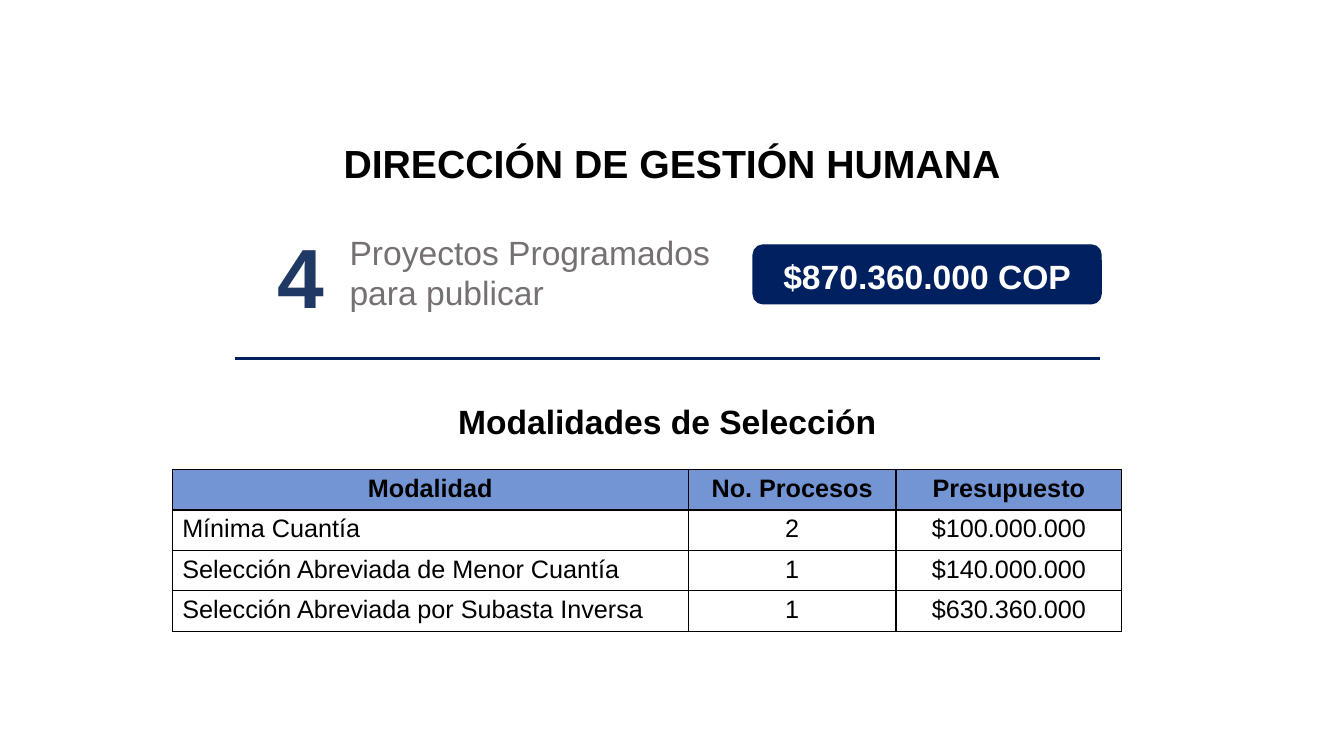
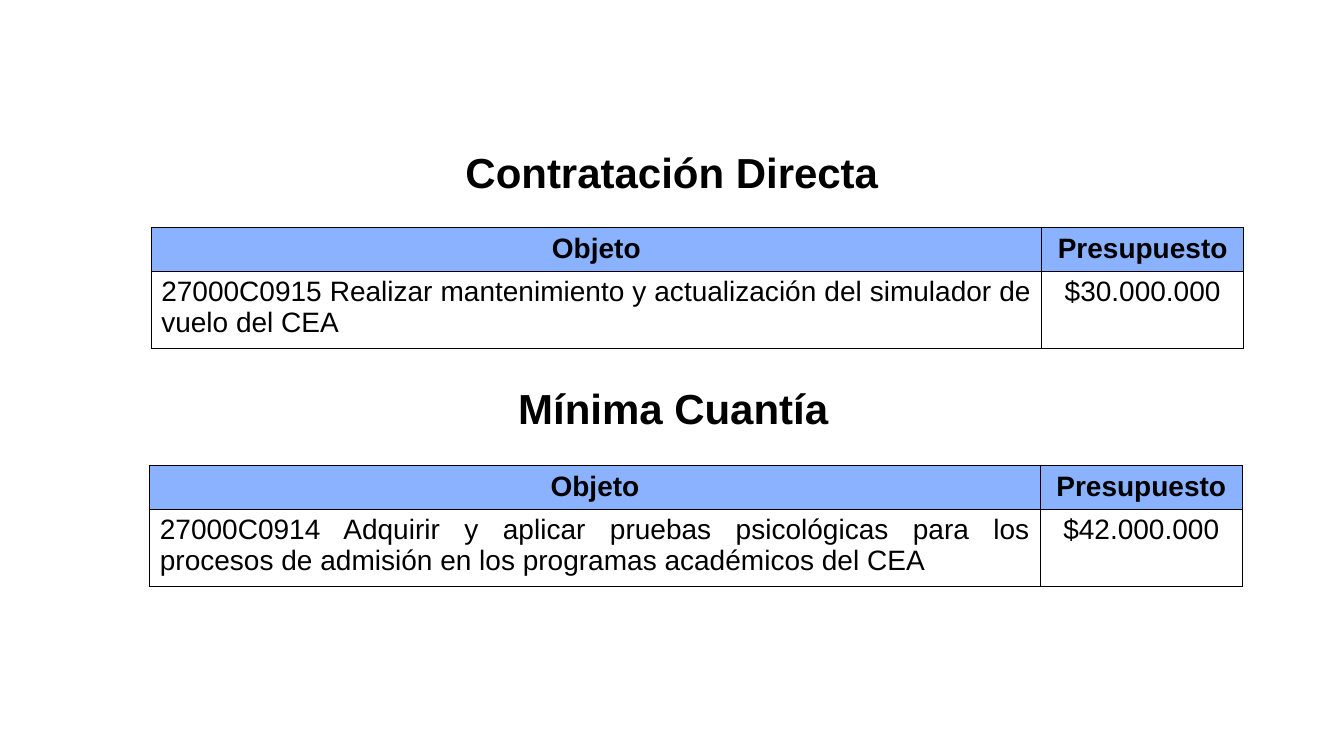
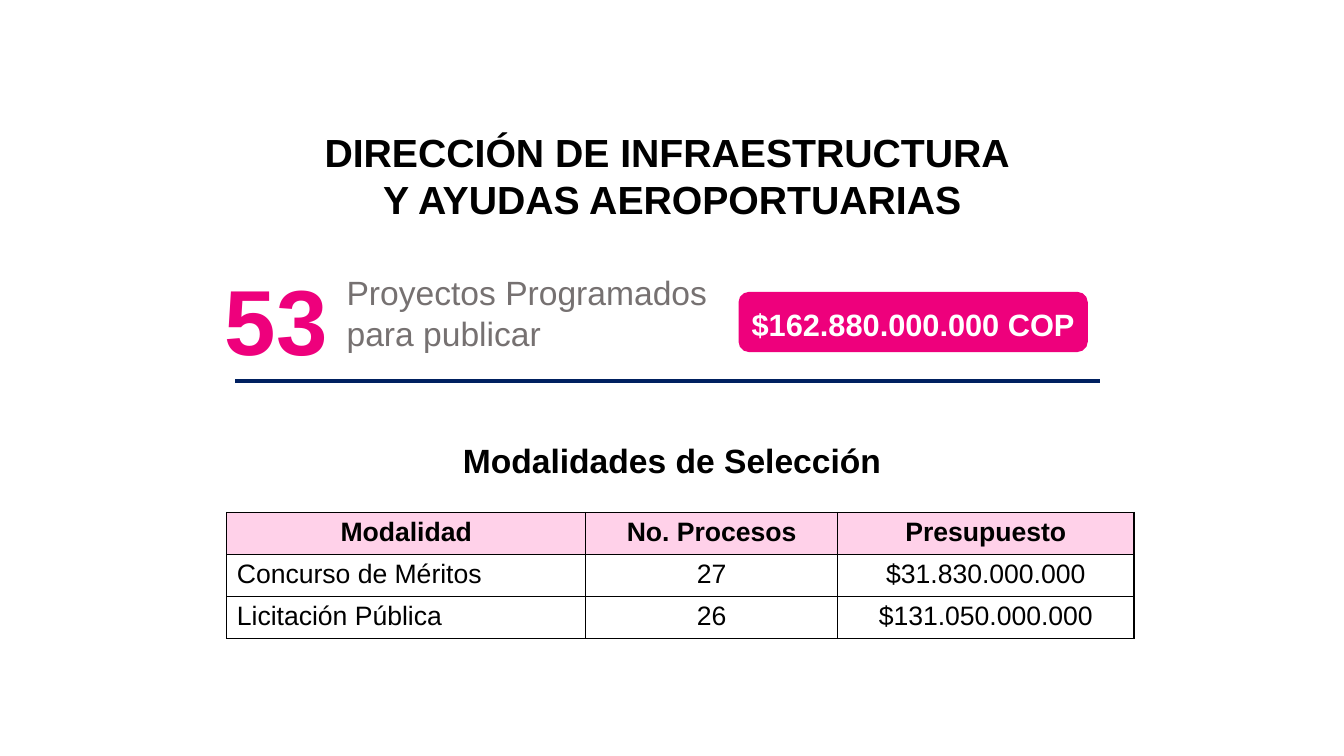
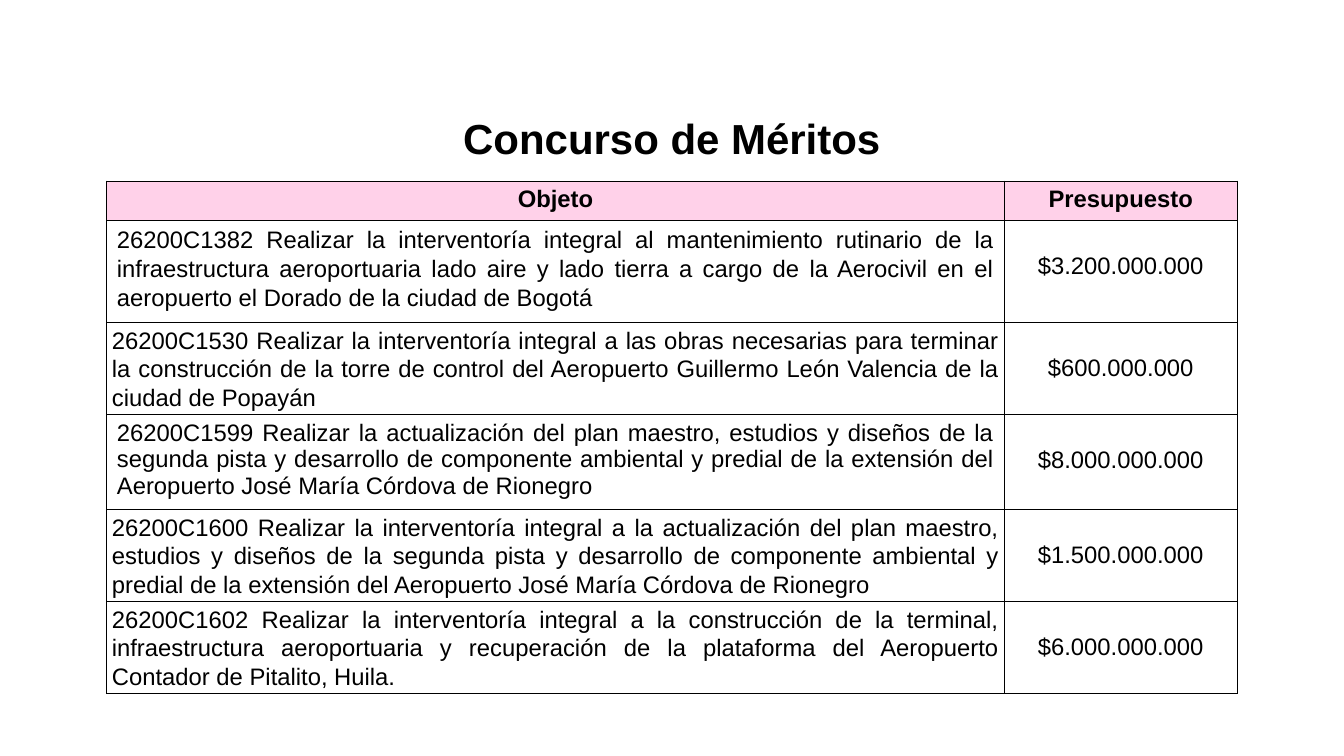
from dataclasses import dataclass
from typing import Optional

from lxml.etree import SubElement
from pptx import Presentation
from pptx.dml.color import RGBColor
from pptx.enum.shapes import MSO_CONNECTOR, MSO_SHAPE
from pptx.enum.text import MSO_ANCHOR, MSO_AUTO_SIZE, PP_ALIGN
from pptx.oxml.ns import qn
from pptx.slide import Slide
from pptx.table import _Cell
from pptx.text.text import TextFrame
from pptx.util import Pt


@dataclass(frozen=True)
class Theme:
    font: str = "Arial"
    black: str = "000000"
    white: str = "FFFFFF"
    grey: str = "767171"
    navy: str = "002060"
    count_blue: str = "203864"
    steel: str = "7395D3"
    sky: str = "8BB2FF"
    magenta: str = "EE007C"
    pink: str = "FFD1E9"
    direction_size: int = 28
    heading_size: int = 30
    label_size: int = 24
    border: float = 1
    rule: float = 2.25


THEME = Theme()


@dataclass(frozen=True)
class Box:
    left: float
    top: float
    width: float
    height: float

    def lengths(self) -> tuple:
        return Pt(self.left), Pt(self.top), Pt(self.width), Pt(self.height)


@dataclass(frozen=True)
class Row:
    height: float
    cells: tuple
    tight: bool = False
    spacing: Optional[float] = None


@dataclass(frozen=True)
class Grid:
    left: float
    top: float
    columns: tuple
    rows: tuple
    header_fill: str
    size: float
    amount_inset: float = 3.6


@dataclass(frozen=True)
class Heading:
    text: str
    box: Box


@dataclass(frozen=True)
class Summary:
    title: Heading
    count: Heading
    count_size: int
    count_color: str
    caption_box: Box
    budget: Heading
    budget_size: int
    budget_fill: str
    rule_top: float
    modalities_box: Box
    modalities: Grid


@dataclass(frozen=True)
class Detail:
    headings: tuple
    grids: tuple


def write_text(
    frame: TextFrame,
    text: str,
    *,
    size: float,
    color: str = THEME.black,
    bold: bool = False,
    align: PP_ALIGN = PP_ALIGN.LEFT,
    spacing: Optional[float] = None,
) -> None:
    for index, line in enumerate(text.split("\n")):
        paragraph = frame.add_paragraph() if index else frame.paragraphs[0]
        paragraph.alignment = align
        if spacing:
            paragraph.line_spacing = spacing
        run = paragraph.add_run()
        run.text = line
        run.font.name = THEME.font
        run.font.size = Pt(size)
        run.font.bold = bold
        run.font.color.rgb = RGBColor.from_string(color)


def add_label(slide: Slide, text: str, box: Box, **text_format) -> None:
    frame = slide.shapes.add_textbox(*box.lengths()).text_frame
    frame.word_wrap = True
    write_text(frame, text, **text_format)


def set_title(slide: Slide, heading: Heading, size: int) -> None:
    title = slide.shapes.title
    title.left, title.top, title.width, title.height = heading.box.lengths()
    frame = title.text_frame
    frame.auto_size = MSO_AUTO_SIZE.NONE
    frame.word_wrap = True
    frame.vertical_anchor = MSO_ANCHOR.TOP
    write_text(frame, heading.text, size=size, bold=True, align=PP_ALIGN.CENTER)


def add_budget(slide: Slide, budget: Heading, size: int, fill: str) -> None:
    badge = slide.shapes.add_shape(MSO_SHAPE.ROUNDED_RECTANGLE, *budget.box.lengths())
    badge.shadow.inherit = False
    badge.fill.solid()
    badge.fill.fore_color.rgb = RGBColor.from_string(fill)
    badge.line.color.rgb = RGBColor.from_string(fill)
    badge.line.width = Pt(THEME.border)
    frame = badge.text_frame
    frame.margin_left = frame.margin_right = frame.margin_bottom = Pt(0)
    frame.margin_top = Pt(3)
    frame.vertical_anchor = MSO_ANCHOR.MIDDLE
    write_text(frame, budget.text, size=size, color=THEME.white, bold=True,
               align=PP_ALIGN.CENTER)


def add_rule(slide: Slide, top: float) -> None:
    rule = slide.shapes.add_connector(
        MSO_CONNECTOR.STRAIGHT, Pt(168), Pt(top), Pt(786), Pt(top)
    )
    rule.line.color.rgb = RGBColor.from_string(THEME.navy)
    rule.line.width = Pt(THEME.rule)
    SubElement(rule._element.spPr, qn("a:effectLst"))


def add_borders(cell: _Cell) -> None:
    properties = cell._tc.get_or_add_tcPr()
    for side in ("lnL", "lnR", "lnT", "lnB"):
        border = SubElement(properties, qn(f"a:{side}"), w=str(Pt(THEME.border)))
        fill = SubElement(border, qn("a:solidFill"))
        SubElement(fill, qn("a:srgbClr"), val=THEME.black)


def add_grid(slide: Slide, grid: Grid) -> None:
    box = Box(grid.left, grid.top, sum(grid.columns), sum(r.height for r in grid.rows))
    table = slide.shapes.add_table(
        len(grid.rows), len(grid.columns), *box.lengths()
    ).table
    table.first_row = table.horz_banding = False
    for column, width in zip(table.columns, grid.columns):
        column.width = Pt(width)
    for row_index, row in enumerate(grid.rows):
        table.rows[row_index].height = Pt(row.height)
        is_header = row_index == 0
        for column_index, text in enumerate(row.cells):
            cell = table.cell(row_index, column_index)
            is_description = column_index == 0 and not is_header
            add_borders(cell)
            if is_header:
                cell.fill.solid()
                cell.fill.fore_color.rgb = RGBColor.from_string(grid.header_fill)
            else:
                cell.fill.background()
            if is_description and row.tight:
                cell.margin_left = cell.margin_right = Pt(3.6)
                cell.margin_top = cell.margin_bottom = Pt(0)
                cell.vertical_anchor = MSO_ANCHOR.MIDDLE
            elif not is_description and not is_header:
                cell.margin_top = Pt(grid.amount_inset)
            write_text(
                cell.text_frame,
                text,
                size=grid.size,
                bold=is_header,
                align=PP_ALIGN.JUSTIFY if is_description else PP_ALIGN.CENTER,
                spacing=row.spacing if is_description else None,
            )


def draw_summary(slide: Slide, summary: Summary) -> None:
    set_title(slide, summary.title, THEME.direction_size)
    add_label(slide, summary.count.text, summary.count.box,
              size=summary.count_size, color=summary.count_color, bold=True)
    add_label(slide, "Proyectos Programados para publicar", summary.caption_box,
              size=THEME.label_size, color=THEME.grey)
    add_budget(slide, summary.budget, summary.budget_size, summary.budget_fill)
    add_rule(slide, summary.rule_top)
    add_label(slide, "Modalidades de Selección", summary.modalities_box,
              size=THEME.label_size, bold=True, align=PP_ALIGN.CENTER)
    add_grid(slide, summary.modalities)


def draw_detail(slide: Slide, detail: Detail) -> None:
    first, *others = detail.headings
    set_title(slide, first, THEME.heading_size)
    for heading in others:
        add_label(slide, heading.text, heading.box, size=THEME.heading_size,
                  bold=True, align=PP_ALIGN.CENTER)
    for grid in detail.grids:
        add_grid(slide, grid)


MODALITY_HEADER = ("Modalidad", "No. Procesos", "Presupuesto")
OBJECT_HEADER = ("Objeto", "Presupuesto")


def modality_rows(height: float, *modalities: tuple) -> tuple:
    return tuple(Row(height, cells) for cells in (MODALITY_HEADER, *modalities))


def contract_grid(left: float, top: float, description: str, amount: str) -> Grid:
    return Grid(
        left, top, (636, 144.5),
        (Row(31.2, OBJECT_HEADER), Row(55.2, (description, amount))),
        THEME.sky, 20,
    )


HUMAN_RESOURCES = Summary(
    title=Heading("DIRECCIÓN DE GESTIÓN HUMANA", Box(95, 96, 770, 41)),
    count=Heading("4", Box(191.5, 157, 69, 80)),
    count_size=60,
    count_color=THEME.count_blue,
    caption_box=Box(242.6, 162, 294.5, 65.5),
    budget=Heading("$870.360.000 COP", Box(538, 175, 248.5, 42)),
    budget_size=24,
    budget_fill=THEME.navy,
    rule_top=256.3,
    modalities_box=Box(309.6, 283, 334, 36),
    modalities=Grid(
        123, 335.5, (368.7, 148.3, 161.3),
        modality_rows(
            28.8,
            ("Mínima Cuantía", "2", "$100.000.000"),
            ("Selección Abreviada de Menor Cuantía", "1", "$140.000.000"),
            ("Selección Abreviada por Subasta Inversa", "1", "$630.360.000"),
        ),
        THEME.steel, 18,
    ),
)

HUMAN_RESOURCES_CONTRACTS = Detail(
    headings=(
        Heading("Contratación Directa", Box(107, 101, 746, 44)),
        Heading("Mínima Cuantía", Box(108, 270, 746, 44)),
    ),
    grids=(
        contract_grid(
            108, 162.6,
            "27000C0915 Realizar mantenimiento y actualización del simulador de "
            "vuelo del CEA",
            "$30.000.000",
        ),
        contract_grid(
            107, 332.6,
            "27000C0914 Adquirir y aplicar pruebas psicológicas para los procesos "
            "de admisión en los programas académicos del CEA",
            "$42.000.000",
        ),
    ),
)

INFRASTRUCTURE = Summary(
    title=Heading(
        "DIRECCIÓN DE INFRAESTRUCTURA\n Y AYUDAS AEROPORTUARIAS",
        Box(91.5, 88, 770, 75),
    ),
    count=Heading("53", Box(153.4, 184.3, 111, 87)),
    count_size=66,
    count_color=THEME.magenta,
    caption_box=Box(240.5, 191, 294.5, 65.5),
    budget=Heading("$162.880.000.000 COP", Box(528, 209, 248.5, 42)),
    budget_size=22,
    budget_fill=THEME.magenta,
    rule_top=272.2,
    modalities_box=Box(313, 311, 334, 36),
    modalities=Grid(
        162, 366, (256.3, 180, 211.7),
        modality_rows(
            30,
            ("Concurso de Méritos", "27", "$31.830.000.000"),
            ("Licitación Pública", "26", "$131.050.000.000"),
        ),
        THEME.pink, 19,
    ),
)

INFRASTRUCTURE_CONTRACTS = Detail(
    headings=(Heading("Concurso de Méritos", Box(95, 77, 770, 44)),),
    grids=(
        Grid(
            76.3, 129.5, (641, 166.5),
            (
                Row(27.9, OBJECT_HEADER),
                Row(73, (
                    "26200C1382 Realizar la interventoría integral al mantenimiento "
                    "rutinario de la infraestructura aeroportuaria lado aire y lado "
                    "tierra a cargo de la Aerocivil en el aeropuerto el Dorado de la "
                    "ciudad de Bogotá",
                    "$3.200.000.000",
                ), spacing=1.07),
                Row(65.6, (
                    "26200C1530 Realizar la interventoría integral a las obras "
                    "necesarias para terminar la construcción de la torre de control "
                    "del Aeropuerto Guillermo León Valencia de la ciudad de Popayán",
                    "$600.000.000",
                ), tight=True, spacing=1.07),
                Row(68.2, (
                    "26200C1599 Realizar la actualización del plan maestro, estudios "
                    "y diseños de la segunda pista y desarrollo de componente "
                    "ambiental y predial de la extensión del Aeropuerto José María "
                    "Córdova de Rionegro",
                    "$8.000.000.000",
                )),
                Row(65.6, (
                    "26200C1600 Realizar la interventoría integral a la actualización "
                    "del plan maestro, estudios y diseños de la segunda pista y "
                    "desarrollo de componente ambiental y predial de la extensión del "
                    "Aeropuerto José María Córdova de Rionegro",
                    "$1.500.000.000",
                ), tight=True, spacing=1.07),
                Row(65.6, (
                    "26200C1602 Realizar la interventoría integral a la construcción "
                    "de la terminal, infraestructura aeroportuaria y recuperación de "
                    "la plataforma del Aeropuerto Contador de Pitalito, Huila.",
                    "$6.000.000.000",
                ), tight=True, spacing=1.07),
            ),
            THEME.pink, 17, amount_inset=23,
        ),
    ),
)


def main() -> None:
    deck = Presentation()
    deck.slide_width, deck.slide_height = Pt(960), Pt(540)
    title_only = deck.slide_layouts[5]
    for summary, detail in (
        (HUMAN_RESOURCES, HUMAN_RESOURCES_CONTRACTS),
        (INFRASTRUCTURE, INFRASTRUCTURE_CONTRACTS),
    ):
        draw_summary(deck.slides.add_slide(title_only), summary)
        draw_detail(deck.slides.add_slide(title_only), detail)
    deck.save("out.pptx")


if __name__ == "__main__":
    main()
